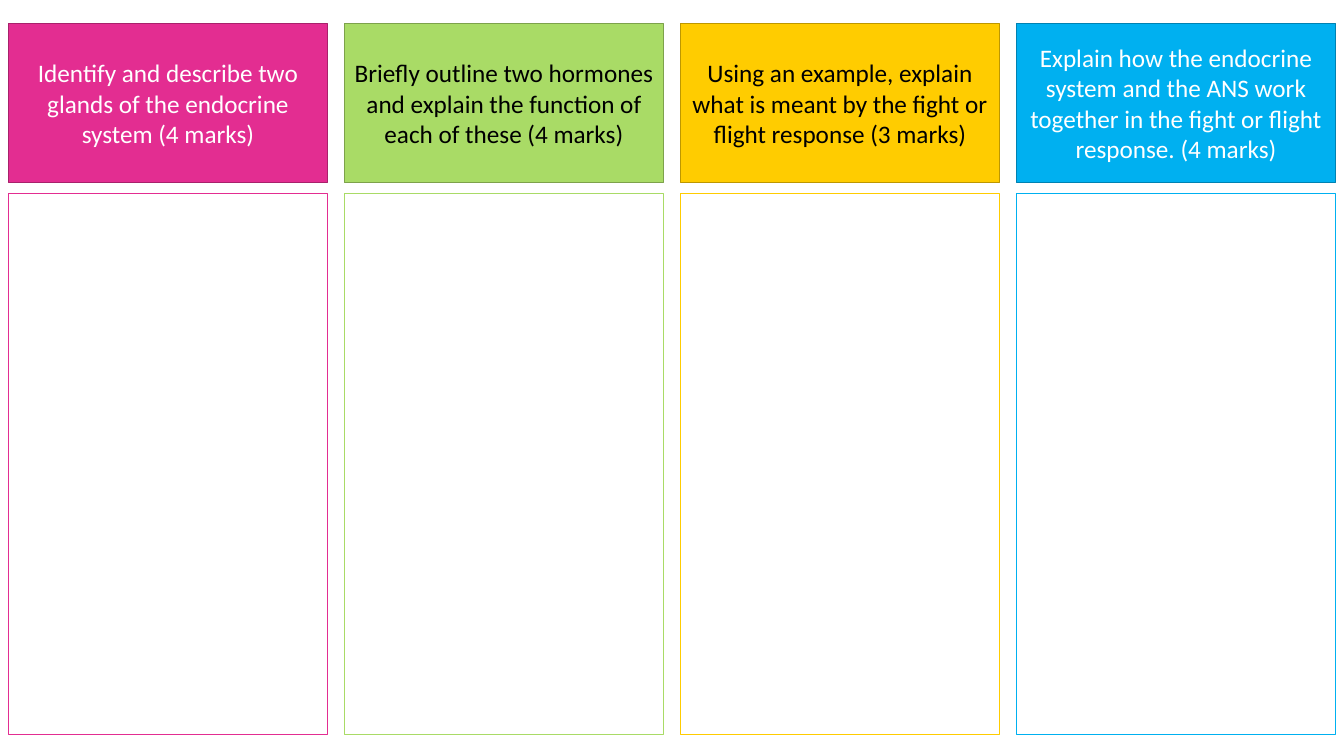
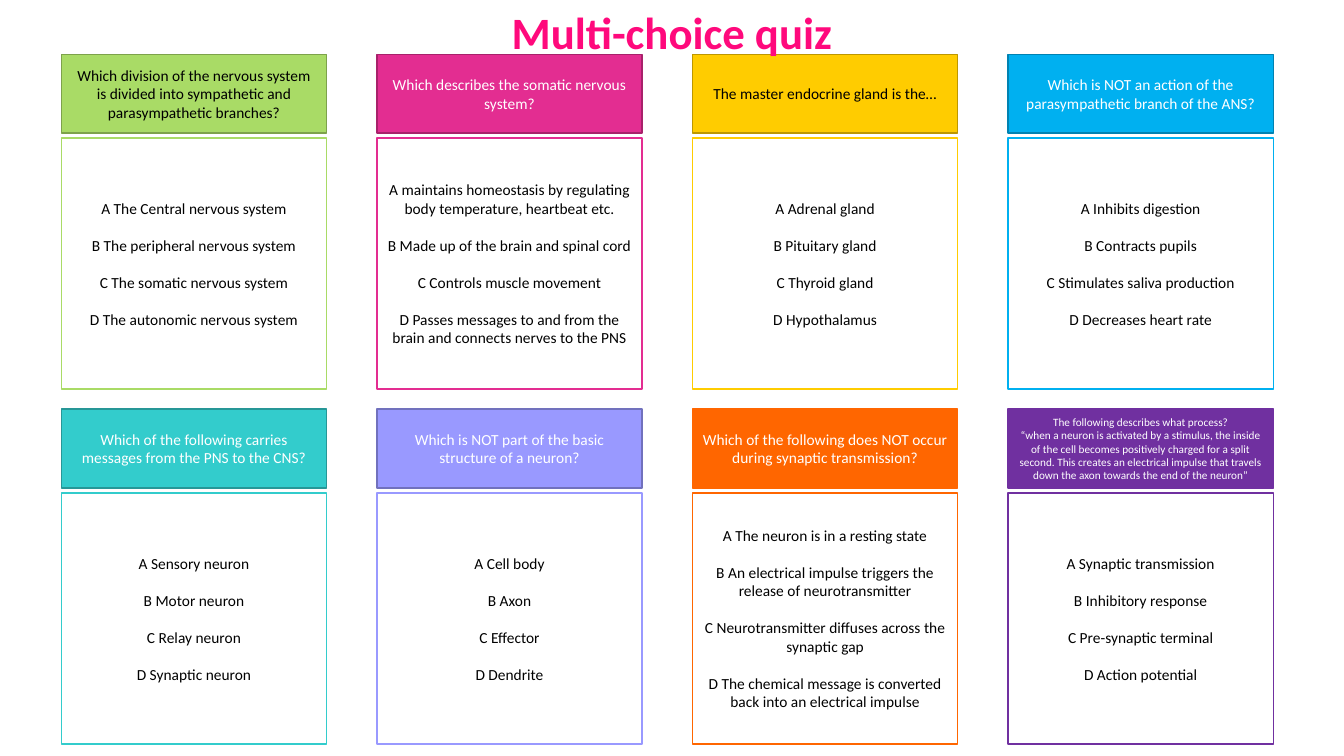
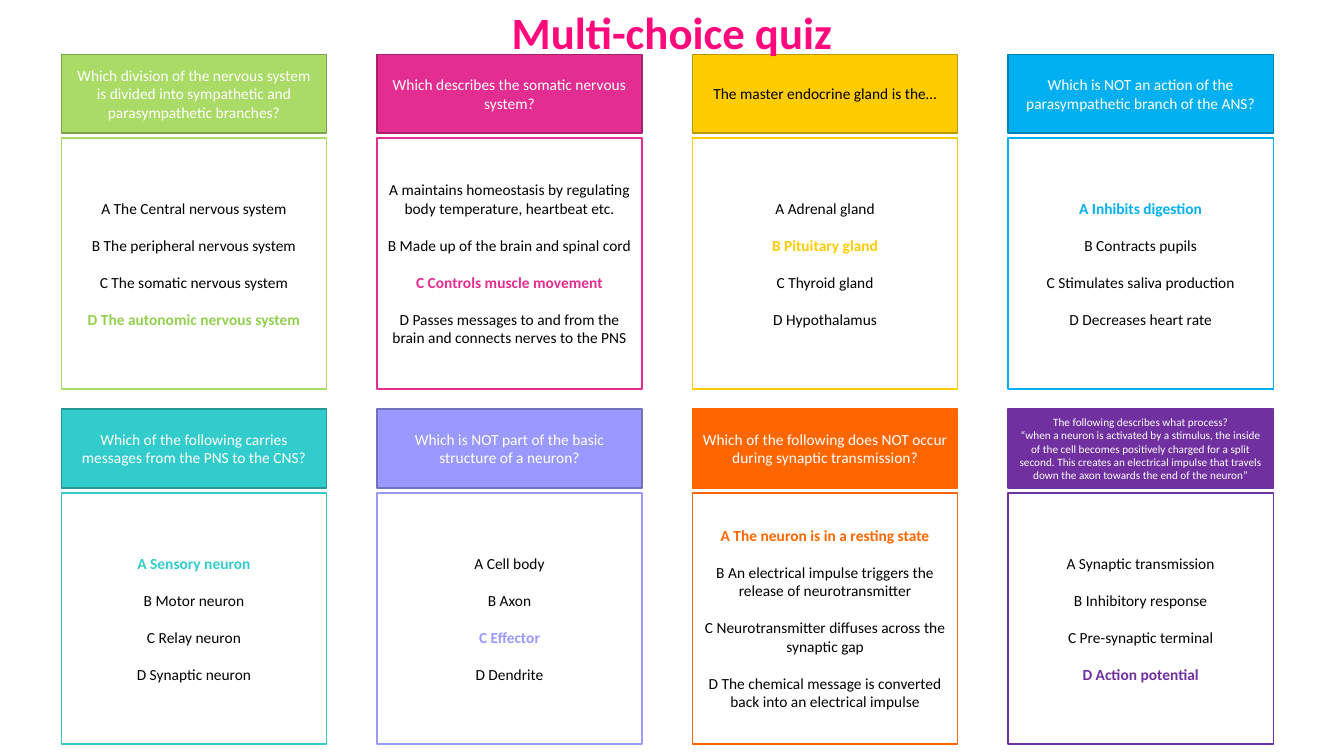
from pptx import Presentation
from pptx.dml.color import RGBColor as RGB
from pptx.enum.shapes import MSO_SHAPE as Form
from pptx.enum.text import MSO_ANCHOR as Anchor, MSO_AUTO_SIZE as Auto, PP_ALIGN as Align
from pptx.util import Pt

WHITE, BLACK = "FFFFFF", "000000"

# Each tone: fill, edge, text on the fill
TONES = {
    "pink": ("E32D91", "A8216B", WHITE),
    "green": ("A9DB66", "7DA24B", BLACK),
    "gold": ("FFCC00", "BD9700", BLACK),
    "blue": ("00B0F0", "0082B2", WHITE),
    "teal": ("33CCCC", "269797", WHITE),
    "lilac": ("9999FF", "7171BD", WHITE),
    "orange": ("FF6600", "FF6600", WHITE),
    "purple": ("7030A0", "7030A0", WHITE),
}

TASKS = [
    ("pink", "Identify and describe two glands of the endocrine system (4 marks)"),
    ("green", "Briefly outline two hormones and explain the function of each of these (4 marks)"),
    ("gold", "Using an example, explain what is meant by the fight or flight response (3 marks)"),
    ("blue", "Explain how the endocrine system and the ANS work together in the fight or "
             "flight response. (4 marks)"),
]

# Each item: tone, question lines, choices, letter of the right choice
QUIZ = [
    ("green", ["Which division of the nervous system is divided into sympathetic and "
               "parasympathetic branches?"],
     ["The Central nervous system", "The peripheral nervous system",
      "The somatic nervous system", "The autonomic nervous system"], "D"),
    ("pink", ["Which describes the somatic nervous system?"],
     ["maintains homeostasis by regulating body temperature, heartbeat etc.",
      "Made up of the brain and spinal cord", "Controls muscle movement",
      "Passes messages to and from the brain and connects nerves to the PNS"], "C"),
    ("gold", ["The master endocrine gland is the…"],
     ["Adrenal gland", "Pituitary gland", "Thyroid gland", "Hypothalamus"], "B"),
    ("blue", ["Which is NOT an action of the parasympathetic branch of the ANS?"],
     ["Inhibits digestion", "Contracts pupils", "Stimulates saliva production",
      "Decreases heart rate"], "A"),
    ("teal", ["Which of the following carries messages from the PNS to the CNS?"],
     ["Sensory neuron", "Motor neuron", "Relay neuron", "Synaptic neuron"], "A"),
    ("lilac", ["Which is NOT part of the basic structure of a neuron?"],
     ["Cell body", "Axon", "Effector", "Dendrite"], "C"),
    ("orange", ["Which of the following does NOT occur during synaptic transmission?"],
     ["The neuron is in a resting state",
      "An electrical impulse triggers the release of neurotransmitter",
      "Neurotransmitter diffuses across the synaptic gap",
      "The chemical message is converted back into an electrical impulse"], "A"),
    ("purple", ["The following describes what process?",
                "“when a neuron is activated by a stimulus, the inside of the cell becomes "
                "positively charged for a split second. This creates an electrical impulse "
                "that travels down the axon towards the end of the neuron”"],
     ["Synaptic transmission", "Inhibitory response", "Pre-synaptic terminal",
      "Action potential"], "D"),
]


def tint(code):
    return RGB.from_string(code)


class Deck:
    """Holds the style and the current slide."""
    font = "Calibri"

    def __init__(self):
        self.prs = Presentation()
        self.prs.slide_width, self.prs.slide_height = Pt(960), Pt(540)

    def page(self, title=None):
        layout = self.prs.slide_layouts[5 if title else 6]
        self.slide = self.prs.slides.add_slide(layout)
        if title:
            self.title(title)

    def line(self, par, text, size, color, bold=False, gap=0):
        for key, value in {"alignment": Align.CENTER, "space_before": Pt(gap)}.items():
            setattr(par, key, value)
        run = par.add_run()
        run.text = text
        for key, value in {"name": self.font, "size": Pt(size), "bold": bold}.items():
            setattr(run.font, key, value)
        run.font.color.rgb = tint(color)

    def title(self, text):
        box = self.slide.shapes.title
        place = {"left": 0, "top": 0, "width": 960, "height": 46}
        for key, value in place.items():
            setattr(box, key, Pt(value))
        frame = box.text_frame
        look = {"auto_size": Auto.NONE, "vertical_anchor": Anchor.TOP, "word_wrap": True}
        for key, value in look.items():
            setattr(frame, key, value)
        self.line(frame.paragraphs[0], text, 32, "FF097C", bold=True)

    def front(self):
        """Bring the title above the boxes."""
        shapes = self.slide.shapes
        shapes.element.append(shapes.title.element)

    def box(self, x, y, w, h, fill, edge):
        box = self.slide.shapes.add_shape(Form.RECTANGLE, Pt(x), Pt(y), Pt(w), Pt(h))
        box.shadow.inherit = False
        box.fill.solid()
        box.fill.fore_color.rgb = tint(fill)
        box.line.color.rgb = tint(edge)
        box.line.width = Pt(1)
        frame = box.text_frame
        for key, value in {"word_wrap": True, "vertical_anchor": Anchor.MIDDLE}.items():
            setattr(frame, key, value)
        return frame

    def fill(self, frame, lines, gap=0):
        """Lines are (text, size, color, bold); gap parts them."""
        for i, line in enumerate(lines):
            par = frame.add_paragraph() if i else frame.paragraphs[0]
            self.line(par, *line, gap=gap if i else 0)

    def head(self, x, y, w, h, tone, lines, size, ink=None):
        fill, edge, text = TONES[tone]
        frame = self.box(x, y, w, h, fill, edge)
        self.fill(frame, [(line, size, ink or text, False) for line in lines])

    def body(self, x, y, w, h, tone, lines=()):
        self.fill(self.box(x, y, w, h, WHITE, TONES[tone][0]), lines, gap=13.2)


def tasks(deck):
    deck.page()
    for col, (tone, text) in enumerate(TASKS):
        x = 6 + 240 * col
        deck.body(x, 138.2, 228, 386.6, tone)
        deck.head(x, 16.6, 228, 113.8, tone, [text], 18)


def quiz(deck, solved):
    deck.page("Multi-choice quiz")
    # The solved page has its own inks for green
    inks = {"green": WHITE} if solved else {}
    marks = {"green": "92D050"}
    for i, (tone, ask, picks, right) in enumerate(QUIZ):
        row, col = divmod(i, 4)
        x, y = 43.9 + 225.4 * col, 38.9 + 253.4 * row
        lines = []
        for mark, pick in zip("ABCD", picks):
            hit = solved and mark == right
            color = marks.get(tone, TONES[tone][0]) if hit else BLACK
            lines.append((f"{mark} {pick}", 11, color, hit))
        deck.body(x, y + 59.8, 189.4, 179.3, tone, lines)
        size = 8 if len(ask) > 1 else 11
        deck.head(x, y, 189.4, 56.3, tone, ask, size, inks.get(tone))
    deck.front()


def main():
    deck = Deck()
    tasks(deck)
    for solved in (False, True):
        quiz(deck, solved)
    deck.prs.save("out.pptx")


if __name__ == "__main__":
    main()
